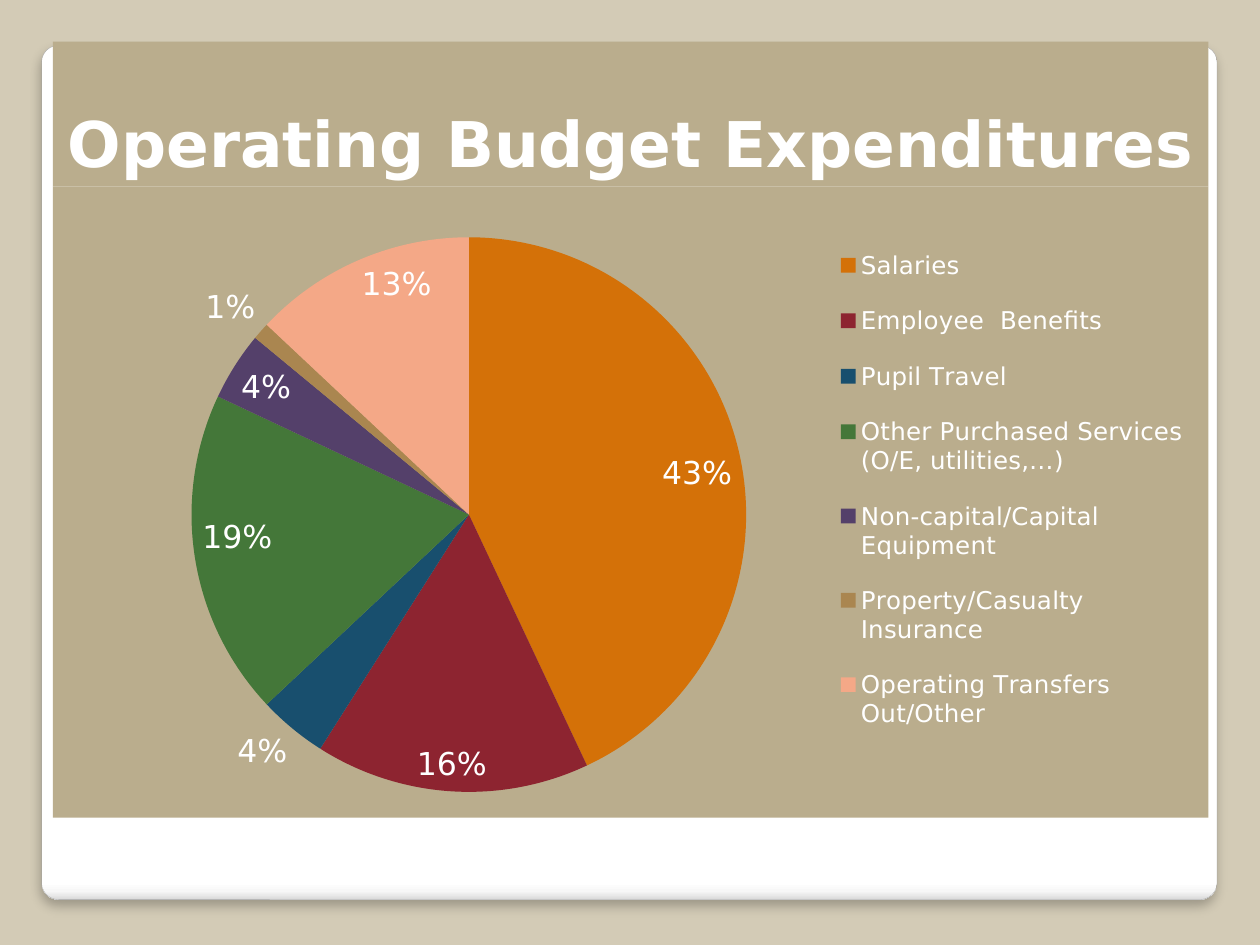
from dataclasses import dataclass

from lxml.etree import SubElement
from pptx import Presentation
from pptx.chart.data import CategoryChartData
from pptx.dml.color import RGBColor
from pptx.enum.chart import XL_CHART_TYPE, XL_LABEL_POSITION as LabelPos, XL_LEGEND_POSITION
from pptx.enum.shapes import MSO_SHAPE
from pptx.enum.text import MSO_ANCHOR, PP_ALIGN
from pptx.oxml import parse_xml
from pptx.oxml.ns import nsdecls, qn
from pptx.util import Inches, Pt


@dataclass(frozen=True)
class Theme:
    font: str = "DejaVu Sans"
    backdrop: str = "D3CBB6"
    panel: str = "BAAD8D"
    text: str = "FFFFFF"
    card_line: str = "A4A4A4"
    card_stops: tuple = ((0, "FFFFFF"), (98, "FFFFFF"), (99, "F7F7F7"), (100, "DADADA"))
    title_size: int = 36
    label_size: int = 18
    legend_size: int = 14


# Category, share, slice colour, label position
EXPENDITURES = [
    ("Salaries", 0.43, "D47108", LabelPos.INSIDE_END),
    ("Employee  Benefits", 0.16, "8D2430", LabelPos.INSIDE_END),
    ("Pupil Travel", 0.04, "184F6E", LabelPos.OUTSIDE_END),
    ("Other Purchased Services (O/E, utilities,…)", 0.19, "447739", LabelPos.INSIDE_END),
    ("Non-capital/Capital Equipment", 0.04, "54406A", LabelPos.INSIDE_END),
    ("Property/Casualty Insurance", 0.01, "AA8650", LabelPos.OUTSIDE_END),
    ("Operating Transfers Out/Other", 0.13, "F4A887", LabelPos.INSIDE_END),
]


def rgb(code):
    return RGBColor.from_string(code)


def box(*lengths):
    return [Inches(length) for length in lengths]


class SlideBuilder:
    def __init__(self, slide, theme):
        self.slide, self.theme = slide, theme
        background = slide.background.fill
        background.solid()
        background.fore_color.rgb = rgb(theme.backdrop)

    def style_font(self, font, size, bold=False):
        font.name, font.size, font.bold = self.theme.font, Pt(size), bold
        font.color.rgb = rgb(self.theme.text)

    def card(self, *place):
        card = self.slide.shapes.add_shape(MSO_SHAPE.ROUNDED_RECTANGLE, *box(*place))
        card.adjustments[0] = 0.02
        card.line.color.rgb = rgb(self.theme.card_line)
        card.line.width = Pt(0.16)
        card.fill.gradient()
        card.fill.gradient_angle = 270
        stops = card.element.spPr.find(".//" + qn("a:gsLst"))
        for stop in list(stops):
            stops.remove(stop)
        for percent, colour in self.theme.card_stops:
            stop = SubElement(stops, qn("a:gs"), pos=str(percent * 1000))
            SubElement(stop, qn("a:srgbClr"), val=colour)
        # Soft shadow straight below
        card.element.spPr.append(parse_xml(
            f'<a:effectLst {nsdecls("a")}><a:outerShdw blurRad="{Pt(6)}" dist="{Pt(4)}" '
            'dir="5400000" rotWithShape="0"><a:srgbClr val="000000">'
            '<a:alpha val="25000"/></a:srgbClr></a:outerShdw></a:effectLst>'))

    def title(self, text, *place):
        title = self.slide.shapes.add_textbox(*box(*place))
        title.fill.solid()
        title.fill.fore_color.rgb = rgb(self.theme.panel)
        frame = title.text_frame
        frame.word_wrap = True
        frame.vertical_anchor = MSO_ANCHOR.BOTTOM
        frame.margin_left = frame.margin_right = Inches(0.05)
        paragraph = frame.paragraphs[0]
        paragraph.text = text
        paragraph.alignment = PP_ALIGN.CENTER
        self.style_font(paragraph.font, self.theme.title_size, bold=True)

    def set_layout(self, part, x, y, w, h, inner=False):
        """Place a chart part by fractions of the chart's size."""
        for old in part.findall(qn("c:layout")):
            part.remove(old)
        target = '<c:layoutTarget val="inner"/>' if inner else ""
        layout = parse_xml(
            f'<c:layout {nsdecls("c")}><c:manualLayout>{target}'
            '<c:xMode val="edge"/><c:yMode val="edge"/>'
            f'<c:x val="{x}"/><c:y val="{y}"/><c:w val="{w}"/><c:h val="{h}"/>'
            '</c:manualLayout></c:layout>')
        position = part.find(qn("c:legendPos"))
        part.insert(0 if position is None else part.index(position) + 1, layout)

    def pie(self, rows, *place):
        data = CategoryChartData(number_format="0%")
        data.categories = [row[0] for row in rows]
        data.add_series("Series 1", [row[1] for row in rows])
        chart = self.slide.shapes.add_chart(XL_CHART_TYPE.PIE, *box(*place), data).chart
        chart.has_title = False
        self.style_font(chart.font, self.theme.label_size)
        plot = chart.plots[0]
        plot.vary_by_categories = True

        # Panel behind the pie
        space = chart.element
        space.find(qn("c:chart")).addnext(parse_xml(
            f'<c:spPr {nsdecls("c", "a")}><a:solidFill><a:srgbClr val="{self.theme.panel}"/>'
            '</a:solidFill><a:ln><a:noFill/></a:ln></c:spPr>'))

        # Slices and their labels
        plot.has_data_labels = True
        labels = plot.data_labels
        labels.show_value, labels.show_percentage = True, False
        labels.number_format, labels.number_format_is_linked = "0%", False
        self.style_font(labels.font, self.theme.label_size)
        for index, (_, _, colour, position) in enumerate(rows):
            point = plot.series[0].points[index]
            point.format.fill.solid()
            point.format.fill.fore_color.rgb = rgb(colour)
            self.style_font(point.data_label.font, self.theme.label_size)
            point.data_label.position = position

        # Legend and plot placement
        chart.has_legend = True
        legend = chart.legend
        legend.position = XL_LEGEND_POSITION.RIGHT
        legend.include_in_layout = False
        self.style_font(legend.font, self.theme.legend_size)
        self.set_layout(space.find(".//" + qn("c:legend")), 0.67, 0.06, 0.32, 0.84)
        self.set_layout(space.find(".//" + qn("c:plotArea")), 0.12, 0.08, 0.48, 0.88, inner=True)


def main():
    deck = Presentation()
    deck.slide_width, deck.slide_height = box(10, 7.5)
    builder = SlideBuilder(deck.slides.add_slide(deck.slide_layouts[6]), Theme())
    builder.card(0.33, 0.36, 9.33, 6.78)
    builder.title("Operating Budget Expenditures", 0.42, 0.33, 9.17, 1.15)
    builder.pie(EXPENDITURES, 0.42, 1.48, 9.17, 5.01)
    deck.save("out.pptx")


if __name__ == "__main__":
    main()
